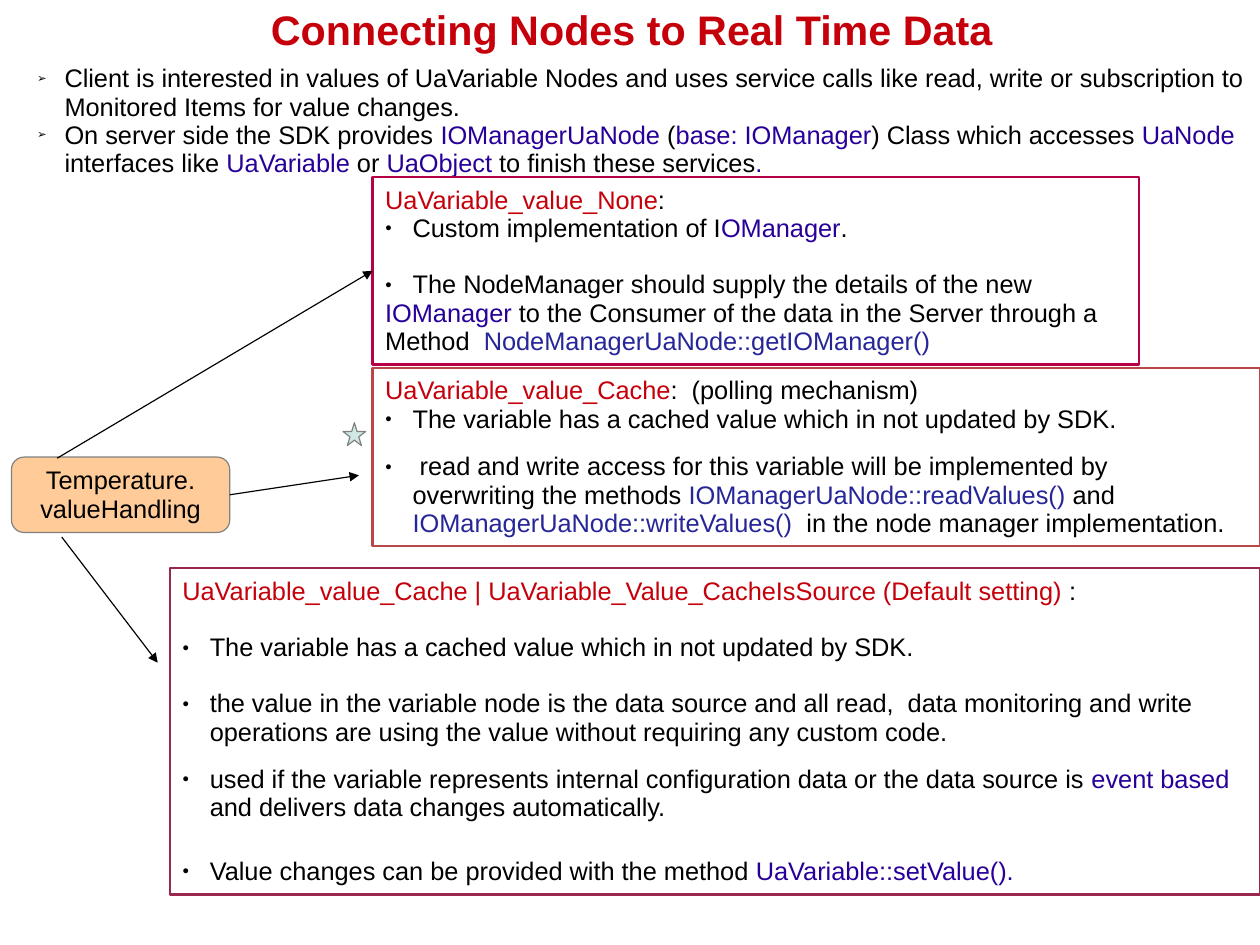
from lxml import etree
from pptx import Presentation
from pptx.dml.color import RGBColor
from pptx.enum.shapes import MSO_CONNECTOR, MSO_SHAPE
from pptx.enum.text import MSO_ANCHOR, PP_ALIGN
from pptx.oxml.ns import qn
from pptx.util import Cm, Inches, Pt

RECT, ROUNDED, STAR = MSO_SHAPE.RECTANGLE, MSO_SHAPE.ROUNDED_RECTANGLE, MSO_SHAPE.STAR_5_POINT
STRAIGHT = MSO_CONNECTOR.STRAIGHT
TOP, MIDDLE = MSO_ANCHOR.TOP, MSO_ANCHOR.MIDDLE
LEFT, CENTER = PP_ALIGN.LEFT, PP_ALIGN.CENTER
LEFT_SIDE, RIGHT_SIDE = 1, 3

THEME = {
    "font": "Arial", "title_size": 26, "body_size": 16, "spacing": 0.93,
    "ink": "000000", "red": "C5000B", "violet": "280099", "blue": "262699",
    "node": "FFCC99", "star": "CFE7E5", "grey": "808080",
    "none_edge": "B80047", "cache_edge": "B84747", "source_edge": "99284C",
}
HANG = Inches(0.24)
BLANK_LINE = 17.5
LIST_GAP = (12, 10)
NO_GAP = (0, 0)
BREAK = "\n"

prs = Presentation()
prs.slide_width, prs.slide_height = Cm(28), Cm(21)
COL, ROW = prs.slide_width / 100, prs.slide_height / 100
slide = prs.slides.add_slide(prs.slide_layouts[6])
shapes = slide.shapes


def on_grid(*lengths):
    """Turn alternating column and row counts into slide lengths."""
    return [round(n * (ROW if i % 2 else COL)) for i, n in enumerate(lengths)]


def write(shape, paragraphs, insets, anchor=MIDDLE, align=LEFT, size=THEME["body_size"], hang=HANG):
    """Fill a shape with (bullet, (space before, space after), [(colour, text), ...]) items."""
    frame = shape.text_frame
    frame.word_wrap = True
    frame.vertical_anchor = anchor
    frame.margin_left, frame.margin_top, frame.margin_right, frame.margin_bottom = map(Inches, insets)
    for i, (bullet, (before, after), pieces) in enumerate(paragraphs):
        paragraph = frame.paragraphs[0] if i == 0 else frame.add_paragraph()
        paragraph.alignment = align
        paragraph.line_spacing = THEME["spacing"]
        paragraph.space_before, paragraph.space_after = Pt(before), Pt(after)
        props = paragraph._p.get_or_add_pPr()
        if hang:
            props.set("marL", str(hang))
            props.set("indent", str(-hang))
        if bullet:
            colour = etree.SubElement(props, qn("a:buClr"))
            etree.SubElement(colour, qn("a:srgbClr"), val=THEME["ink"])
            etree.SubElement(props, qn("a:buSzPct"), val="45000")
            etree.SubElement(props, qn("a:buFont"), typeface=THEME["font"])
            etree.SubElement(props, qn("a:buChar"), char=bullet)
        for colour, text in pieces:
            if text == BREAK:
                paragraph.add_line_break()
                continue
            run = paragraph.add_run()
            run.text = text
            run.font.name, run.font.size = THEME["font"], Pt(size)
            run.font.color.rgb = RGBColor.from_string(THEME[colour])


# Title and introduction
title = shapes.add_textbox(*on_grid(5.17, 0.73, 90.02, 4.84))
write(title, [(None, NO_GAP, [("red", "Connecting Nodes to Real Time Data")])],
      (0, 0.03, 0, 0), align=CENTER, size=THEME["title_size"], hang=0)
title.text_frame.paragraphs[0].runs[0].font.bold = True

intro = shapes.add_textbox(*on_grid(2.05, 6.17, 99.09, 15.36))
write(intro, [
    ("➢", NO_GAP, [("ink", "Client is interested in values of UaVariable Nodes and uses service calls "
                           "like read, write or subscription to Monitored Items for value changes.")]),
    ("➢", NO_GAP, [
        ("ink", "On server side the SDK provides "), ("violet", "IOManagerUaNode"),
        ("ink", " ("), ("violet", "base: IOManager"), ("ink", ") Class which accesses "),
        ("violet", "UaNode"), ("ink", " interfaces like "), ("violet", "UaVariable"),
        ("ink", " or "), ("violet", "UaObject "), ("ink", "to finish these services"),
        ("violet", ".")]),
], (0.1, 0.06, 0.1, 0.05), anchor=TOP)

# Three ways of handling the value
CACHED = ("ink", "The variable has a cached value which in not updated by SDK.")
options = [
    ((29.58, 18.74, 60.8, 19.83), "none_edge", [
        (None, NO_GAP, [("red", "UaVariable_value_None"), ("ink", ":")]),
        ("●", NO_GAP, [("ink", "Custom implementation of I"), ("violet", "OManager"), ("ink", ".")]),
        ("●", (BLANK_LINE, 0), [("ink", "The NodeManager should supply the details of the new")]),
        (None, NO_GAP, [("violet", "IOManager"),
                        ("ink", " to the Consumer of the data in the Server through a")]),
        (None, NO_GAP, [("ink", "Method  "), ("blue", "NodeManagerUaNode::getIOManager()")]),
    ]),
    ((29.58, 38.94, 70.42, 18.86), "cache_edge", [
        (None, NO_GAP, [("red", "UaVariable_value_Cache"), ("ink", ":  (polling mechanism)")]),
        ("●", NO_GAP, [CACHED]),
        ("●", LIST_GAP, [
            ("ink", " read and write access for this variable will be implemented by"),
            ("ink", BREAK), ("ink", "overwriting the methods "),
            ("blue", "IOManagerUaNode::readValues() "), ("ink", "and "),
            ("blue", "IOManagerUaNode::writeValues()  "),
            ("ink", "in the node manager implementation.")]),
    ]),
    ((13.48, 60.1, 86.52, 34.58), "source_edge", [
        (None, NO_GAP, [
            ("red", "UaVariable_value_Cache | UaVariable_Value_CacheIsSource (Default setting) "),
            ("ink", ":")]),
        ("●", (BLANK_LINE, 0), [CACHED]),
        ("●", (BLANK_LINE, 0), [
            ("ink", "the value in the variable node is the data source and all read,  data monitoring "
                    "and write operations are using the value without requiring any custom code.")]),
        ("●", LIST_GAP, [
            ("ink", "used if the variable represents internal configuration data or the data source is "),
            ("violet", "event based"), ("ink", " and delivers data changes automatically.")]),
        ("●", LIST_GAP, [("ink", "Value changes can be provided with the method "),
                         ("violet", "UaVariable::setValue().")]),
    ]),
]
option_boxes = []
for area, edge, paragraphs in options:
    option = shapes.add_shape(RECT, *on_grid(*area))
    option.shadow.inherit = False
    option.fill.background()
    option.line.color.rgb = RGBColor.from_string(THEME[edge])
    option.line.width = Pt(1.45)
    write(option, paragraphs, (0.11, 0.07, 0.11, 0.06))
    option_boxes.append(option)

# Variable node and the star beside the polling option
markers = []
for kind, area, fill in [(ROUNDED, (0.91, 48.37, 17.33, 7.98), "node"),
                         (STAR, (27.22, 44.74, 1.81, 2.42), "star")]:
    marker = shapes.add_shape(kind, *on_grid(*area))
    marker.shadow.inherit = False
    marker.fill.solid()
    marker.fill.fore_color.rgb = RGBColor.from_string(THEME[fill])
    marker.line.color.rgb = RGBColor.from_string(THEME["grey"])
    marker.line.width = Pt(0.75)
    markers.append(marker)
value_handling = markers[0]
write(value_handling, [(None, NO_GAP, [("ink", line)]) for line in ("Temperature.", "valueHandling")],
      (0.1, 0.06, 0.1, 0.05), align=CENTER, hang=0)

# Arrows from the node to its options
arrows = []
for ends in [(4.54, 48.49, 29.58, 28.66), (18.24, 52.36, 28.49, 50.3), (4.9, 56.83, 12.52, 70.13)]:
    arrow = shapes.add_connector(STRAIGHT, *on_grid(*ends))
    arrow.line.color.rgb = RGBColor.from_string(THEME["ink"])
    arrow.line.width = Pt(0.75)
    etree.SubElement(arrow.line._get_or_add_ln(), qn("a:tailEnd"), type="triangle")
    etree.SubElement(arrow._element.spPr, qn("a:effectLst"))
    arrows.append(arrow)
arrows[0].end_connect(option_boxes[0], LEFT_SIDE)
arrows[1].begin_connect(value_handling, RIGHT_SIDE)

prs.save("out.pptx")
